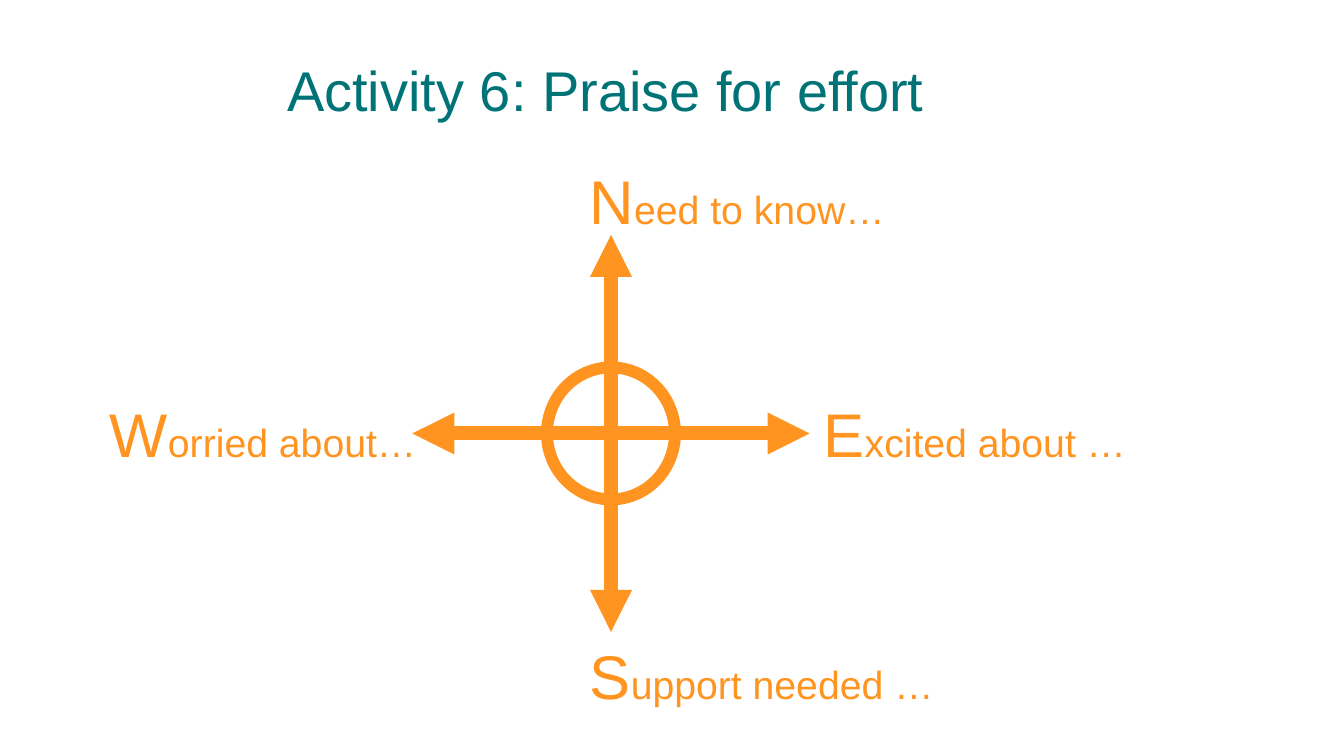
from dataclasses import dataclass

import pptx
import pptx.dml.color
import pptx.enum.shapes
import pptx.enum.text
import pptx.oxml
import pptx.oxml.ns
import pptx.util
from pptx.util import Inches

COLORS = {"heading": "007377", "compass": "FF9421"}
FONT = "Arial"
CENTER_X, CENTER_Y = 6.06, 4.3
ARM = 1.97
RING_WIDTH, RING_HEIGHT = 1.27, 1.31


@dataclass(frozen=True)
class Direction:
    initial: str
    rest: str
    left: float
    top: float
    width: float


@dataclass(frozen=True)
class Axis:
    start: tuple[float, float]
    end: tuple[float, float]


DIRECTIONS = [
    Direction("N", "eed to know…", 5.75, 1.57, 3.16),
    Direction("E", "xcited about …", 8.07, 3.88, 3.24),
    Direction("S", "upport needed …", 5.75, 6.28, 3.66),
    Direction("W", "orried about…", 0.99, 3.88, 3.28),
]
AXES = [
    Axis((CENTER_X, CENTER_Y - ARM), (CENTER_X, CENTER_Y + ARM)),
    Axis((CENTER_X + ARM, CENTER_Y), (CENTER_X - ARM, CENTER_Y)),
]


def rgb(color: str) -> pptx.dml.color.RGBColor:
    return pptx.dml.color.RGBColor.from_string(COLORS[color])


def add_run(paragraph, text: str, *, size: float, color: str) -> None:
    run = paragraph.add_run()
    run.text = text
    run.font.name = FONT
    run.font.size = pptx.util.Pt(size)
    run.font.color.rgb = rgb(color)


def style_line(line, width: float) -> None:
    line.color.rgb = rgb("compass")
    line.width = pptx.util.Pt(width)


def draw_title(slide, text: str) -> None:
    box = slide.shapes.add_textbox(Inches(2.75), Inches(0.2), Inches(9.47), Inches(1.45))
    frame = box.text_frame
    frame.word_wrap = True
    frame.vertical_anchor = pptx.enum.text.MSO_ANCHOR.MIDDLE
    frame.paragraphs[0].line_spacing = 0.9
    add_run(frame.paragraphs[0], text, size=40, color="heading")


def draw_axis(slide, axis: Axis) -> None:
    arrow = slide.shapes.add_connector(
        pptx.enum.shapes.MSO_CONNECTOR.STRAIGHT,
        *(Inches(value) for value in axis.start + axis.end),
    )
    style_line(arrow.line, 10)
    # Arrowheads at both ends, no shadow
    outline = arrow.line._get_or_add_ln()
    for end in ("a:headEnd", "a:tailEnd"):
        head = pptx.oxml.xmlchemy.OxmlElement(end)
        head.set("type", "triangle")
        outline.append(head)
    arrow._element.spPr.append(pptx.oxml.xmlchemy.OxmlElement("a:effectLst"))


def draw_direction(slide, direction: Direction) -> None:
    box = slide.shapes.add_textbox(
        Inches(direction.left), Inches(direction.top),
        Inches(direction.width), Inches(0.84),
    )
    frame = box.text_frame
    frame.word_wrap = False
    frame.auto_size = pptx.enum.text.MSO_AUTO_SIZE.SHAPE_TO_FIT_TEXT
    add_run(frame.paragraphs[0], direction.initial, size=44, color="compass")
    add_run(frame.paragraphs[0], direction.rest, size=28, color="compass")


def draw_ring(slide) -> None:
    ring = slide.shapes.add_shape(
        pptx.enum.shapes.MSO_SHAPE.OVAL,
        Inches(CENTER_X - RING_WIDTH / 2), Inches(CENTER_Y - RING_HEIGHT / 2),
        Inches(RING_WIDTH), Inches(RING_HEIGHT),
    )
    ring.shadow.inherit = False
    ring.fill.background()
    style_line(ring.line, 8.5)


def main() -> None:
    presentation = pptx.Presentation()
    presentation.slide_width = Inches(13.33)
    presentation.slide_height = Inches(7.5)
    slide = presentation.slides.add_slide(presentation.slide_layouts[6])

    # Heading
    draw_title(slide, "Activity 6: Praise for effort")

    # Compass with its four prompts
    for axis in AXES:
        draw_axis(slide, axis)
    for direction in DIRECTIONS:
        draw_direction(slide, direction)
    draw_ring(slide)

    presentation.save("out.pptx")


if __name__ == "__main__":
    main()
